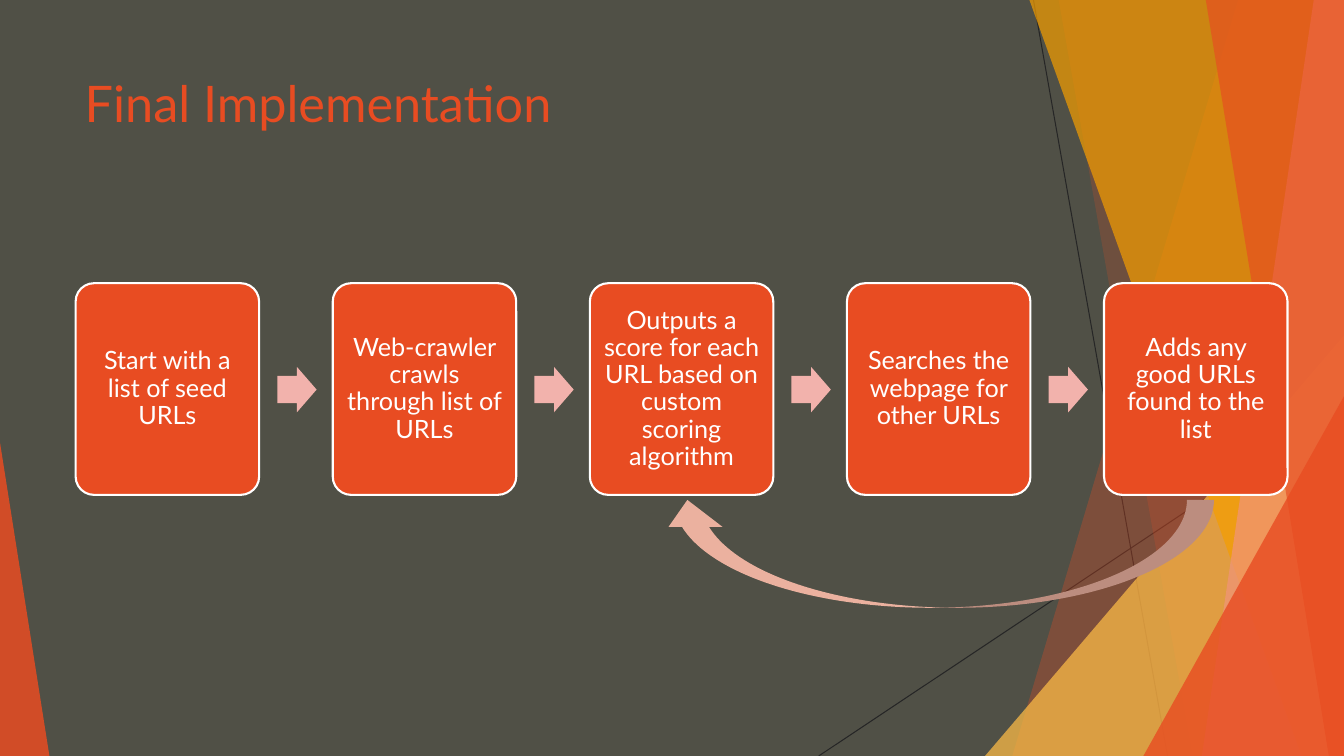
import pptx
import pptx.util
import pptx.dml.color
import pptx.enum.shapes
import pptx.enum.text
import pptx.oxml.ns
from lxml import etree
from pptx.util import Inches, Pt

WIDE, HIGH = 13.33, 7.5
KIND = pptx.enum.shapes.MSO_SHAPE
ALIGN = pptx.enum.text.PP_ALIGN
ANCHOR = pptx.enum.text.MSO_ANCHOR
qn = pptx.oxml.ns.qn


def color(code):
    return pptx.dml.color.RGBColor.from_string(code)


class Deck:
    font = "Lato"
    main, pale, white, dark = "E84C22", "F2B2AC", "FFFFFF", "262626"

    def __init__(self, back):
        self.prs = pptx.Presentation()
        self.prs.slide_width = Inches(WIDE)
        self.prs.slide_height = Inches(HIGH)
        self.slide = self.prs.slides.add_slide(self.prs.slide_layouts[5])
        self.shapes = self.slide.shapes
        fill = self.slide.background.fill
        fill.solid()
        fill.fore_color.rgb = color(back)

    def paint(self, shape, code, alpha=100):
        shape.shadow.inherit = False
        shape.line.fill.background()
        shape.fill.solid()
        shape.fill.fore_color.rgb = color(code)
        if alpha < 100:
            tint = shape._element.spPr.find(qn("a:solidFill")).find(qn("a:srgbClr"))
            etree.SubElement(tint, qn("a:alpha"), val=str(alpha * 1000))

    def line(self, x1, y1, x2, y2):
        line = self.shapes.add_connector(
            pptx.enum.shapes.MSO_CONNECTOR.STRAIGHT,
            Inches(x1), Inches(y1), Inches(x2), Inches(y2))
        line.line.color.rgb = color(self.dark)
        line.line.width = Pt(0.75)
        etree.SubElement(line._element.spPr, qn("a:effectLst"))

    def band(self, top, base, code, alpha):
        """Fill from a slanted left edge to the right side of the slide."""
        pen = self.shapes.build_freeform(Inches(top), 0)
        pen.add_line_segments(
            [(Inches(x), Inches(y)) for x, y in
             ((WIDE, 0), (WIDE, HIGH), (base, HIGH))], close=True)
        self.paint(pen.convert_to_shape(), code, alpha)

    def shape(self, kind, x, y, w, h, code, alpha=100, adjust=()):
        shape = self.shapes.add_shape(
            kind, Inches(x), Inches(y), Inches(w), Inches(h))
        for i, value in enumerate(adjust):
            shape.adjustments[i] = value
        self.paint(shape, code, alpha)
        return shape

    def wedge(self, x, y, w, code, alpha, tip):
        self.shape(KIND.ISOSCELES_TRIANGLE, x, y, w, HIGH - y, code, alpha, [tip])

    def label(self, shape, text, size, code, align, anchor):
        frame = shape.text_frame
        frame.text = text
        frame.word_wrap = True
        frame.vertical_anchor = anchor
        para = frame.paragraphs[0]
        para.alignment = align
        para.font.name = self.font
        para.font.size = Pt(size)
        para.font.color.rgb = color(code)
        return frame

    def title(self, text, x, y, w, h):
        title = self.shapes.title
        title.left, title.top = Inches(x), Inches(y)
        title.width, title.height = Inches(w), Inches(h)
        self.label(title, text, 36, self.main, ALIGN.LEFT, ANCHOR.TOP)

    def step(self, text, x, y, w, h):
        box = self.shape(KIND.ROUNDED_RECTANGLE, x, y, w, h, self.main, adjust=[0.1])
        box.line.color.rgb = color(self.white)
        box.line.width = Pt(1.5)
        frame = self.label(box, text, 18, self.white, ALIGN.CENTER, ANCHOR.MIDDLE)
        frame.margin_left = frame.margin_right = Inches(0.07)
        frame.margin_top = frame.margin_bottom = Inches(0.07)
        frame.paragraphs[0].line_spacing = 0.9

    def loop(self, x, y, w, h, code):
        arrow = self.shape(KIND.CURVED_UP_ARROW, x, y, w, h, code)
        arrow._element.spPr.find(qn("a:xfrm")).set("flipH", "1")


def main():
    deck = Deck("505046")

    # Backdrop
    deck.line(10.25, 0, 11.58, HIGH)
    deck.line(WIDE, 4.03, 8.12, HIGH)
    deck.band(12.28, 10.04, deck.main, 30)
    deck.band(10.5, 11.83, deck.main, 20)
    deck.wedge(9.77, 3.33, 3.56, "FFBD47", 72, 1)
    deck.band(10.21, 12.91, "F49D00", 70)
    deck.band(13.03, 11.92, "F1947A", 70)
    deck.band(11.96, 13.18, deck.main, 65)
    deck.wedge(11.34, 3.93, 1.99, deck.main, 80, 1)
    deck.wedge(0, 4.39, 0.49, deck.main, 85, 0)

    # Title
    deck.title("Final Implementation", 0.74, 0.67, 9.4, 1.44)

    # Steps with an arrow between neighbours
    steps = [
        "Start with a list of seed URLs",
        "Web-crawler crawls through list of URLs",
        "Outputs a score for each URL based on custom scoring algorithm",
        "Searches the webpage for other URLs",
        "Adds any good URLs found to the list",
    ]
    left, pitch = 0.75, 2.55
    for i, text in enumerate(steps):
        x = left + i * pitch
        if i:
            deck.shape(KIND.RIGHT_ARROW, x - 0.55, 3.64, 0.39, 0.45,
                       deck.pale, adjust=[0.6, 0.5])
        deck.step(text, x, 2.81, 1.82, 2.1)

    # Way back to scoring
    deck.loop(6.55, 4.96, 5.49, 1.07, "EBB19F")

    deck.prs.save("out.pptx")


if __name__ == "__main__":
    main()
